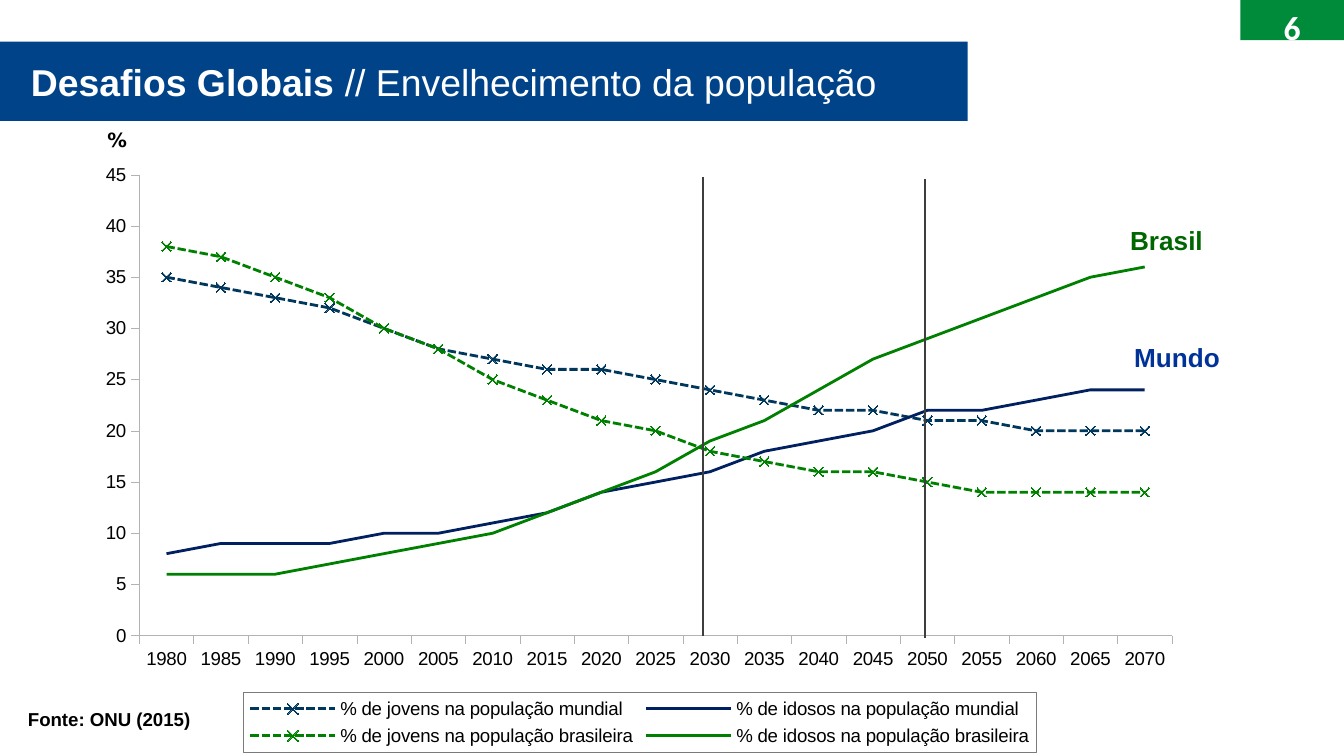
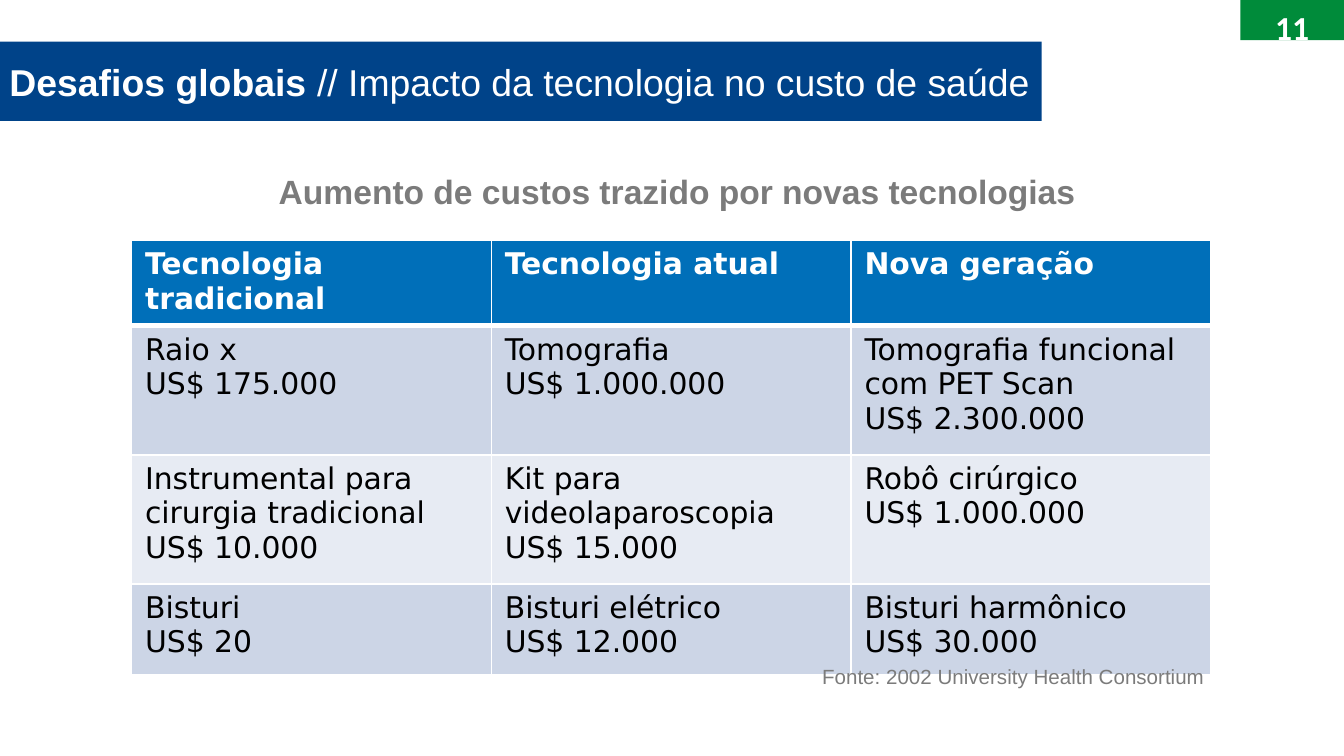
"""Build two slides on population ageing and the cost of health technology."""
from dataclasses import dataclass

from lxml import etree
from pptx import Presentation
from pptx.chart.data import CategoryChartData
from pptx.dml.color import RGBColor
from pptx.enum.chart import XL_CHART_TYPE, XL_LEGEND_POSITION, XL_MARKER_STYLE, XL_TICK_MARK
from pptx.enum.dml import MSO_LINE
from pptx.enum.shapes import MSO_CONNECTOR, MSO_SHAPE
from pptx.enum.text import MSO_ANCHOR, MSO_AUTO_SIZE, PP_ALIGN
from pptx.oxml.ns import qn
from pptx.util import Inches, Pt

LINE_CHART = XL_CHART_TYPE.LINE_MARKERS
LEGEND_BOTTOM = XL_LEGEND_POSITION.BOTTOM
MARKER_X, MARKER_NONE = XL_MARKER_STYLE.X, XL_MARKER_STYLE.NONE
TICK_OUT = XL_TICK_MARK.OUTSIDE
SHORT_DASH = MSO_LINE.SQUARE_DOT
STRAIGHT = MSO_CONNECTOR.STRAIGHT
RECTANGLE = MSO_SHAPE.RECTANGLE
TOP, MIDDLE = MSO_ANCHOR.TOP, MSO_ANCHOR.MIDDLE
FIT_SHAPE, FIT_NONE = MSO_AUTO_SIZE.SHAPE_TO_FIT_TEXT, MSO_AUTO_SIZE.NONE
LEFT, CENTER = PP_ALIGN.LEFT, PP_ALIGN.CENTER
TITLE_ONLY = 5


@dataclass(frozen=True)
class Theme:
    """Colours, fonts and type sizes of the presentation."""
    white: str = "FFFFFF"
    black: str = "000000"
    band: str = "004389"
    badge: str = "008B3A"
    gray: str = "7B7B7B"
    axis: str = "B3B3B3"
    guide: str = "3E3E3E"
    world_young: str = "00375C"
    world_old: str = "002060"
    brazil: str = "008000"
    brazil_label: str = "006600"
    world_label: str = "003399"
    header: str = "006FB9"
    rows: tuple = ("CCD5E6", "E7EBF3")
    font: str = "Arial"
    badge_font: str = "Calibri"
    table_font: str = "DejaVu Sans"
    title_size: float = 20
    heading_size: float = 18
    table_size: float = 16
    label_size: float = 14
    source_size: float = 11
    unit_size: float = 10.5
    chart_size: float = 10


YEARS = [str(year) for year in range(1980, 2071, 5)]
WORLD_YOUNG = (35, 34, 33, 32, 30, 28, 27, 26, 26, 25, 24, 23, 22, 22, 21, 21, 20, 20, 20)
WORLD_OLD = (8, 9, 9, 9, 10, 10, 11, 12, 14, 15, 16, 18, 19, 20, 22, 22, 23, 24, 24)
BRAZIL_YOUNG = (38, 37, 35, 33, 30, 28, 25, 23, 21, 20, 18, 17, 16, 16, 15, 14, 14, 14, 14)
BRAZIL_OLD = (6, 6, 6, 7, 8, 9, 10, 12, 14, 16, 19, 21, 24, 27, 29, 31, 33, 35, 36)

TECHNOLOGIES = (
    ("Tecnologia tradicional", "Tecnologia atual", "Nova geração"),
    ("Raio x\nUS$ 175.000", "Tomografia\nUS$ 1.000.000",
     "Tomografia funcional com PET Scan\nUS$ 2.300.000"),
    ("Instrumental para cirurgia tradicional\nUS$ 10.000",
     "Kit para videolaparoscopia\nUS$ 15.000", "Robô cirúrgico\nUS$ 1.000.000"),
    ("Bisturi\nUS$ 20", "Bisturi elétrico\nUS$ 12.000", "Bisturi harmônico\nUS$ 30.000"),
)


class Deck:
    """Hold the theme and the current slide, and draw each kind of element."""

    def __init__(self, theme):
        """Start a widescreen presentation with the given theme."""
        self.theme = theme
        self.show = Presentation()
        self.show.slide_width = Inches(10)
        self.show.slide_height = Inches(10) * 9 // 16
        self.slide = None

    def style(self, font, size, color, bold=False, name=None):
        """Format one font."""
        font.name = name or self.theme.font
        font.size = Pt(size)
        font.bold = bold
        font.color.rgb = RGBColor.from_string(color)

    def fill(self, target, color):
        """Give a shape or cell a solid fill."""
        target.fill.solid()
        target.fill.fore_color.rgb = RGBColor.from_string(color)

    def stroke(self, line, color, width):
        """Set the colour and width of a line."""
        line.color.rgb = RGBColor.from_string(color)
        line.width = Pt(width)

    def new_slide(self, number, topic, subject, band_width, indent):
        """Add a slide with its page badge and title band."""
        self.slide = self.show.slides.add_slide(self.show.slide_layouts[TITLE_ONLY])
        theme = self.theme
        badge = self.slide.shapes.add_shape(
            RECTANGLE, Inches(9.23), 0, Inches(0.77), Inches(0.3))
        badge.shadow.inherit = False
        self.fill(badge, theme.badge)
        badge.line.fill.background()
        badge.text_frame.text = number
        badge.text_frame.vertical_anchor = TOP
        page = badge.text_frame.paragraphs[0]
        page.alignment = CENTER
        self.style(page.runs[0].font, theme.heading_size, theme.white, True, theme.badge_font)

        band = self.slide.shapes.title
        band.left, band.top = 0, Inches(0.31)
        band.width, band.height = Inches(band_width), Inches(0.59)
        self.fill(band, theme.band)
        frame = band.text_frame
        frame.auto_size = FIT_NONE
        frame.word_wrap = True
        frame.vertical_anchor = MIDDLE
        frame.margin_left, frame.margin_right = Inches(indent), Inches(0.07)
        frame.margin_top = frame.margin_bottom = Inches(0.04)
        heading = frame.paragraphs[0]
        heading.alignment = LEFT
        for words, bold in ((topic + " ", True), ("// " + subject, False)):
            run = heading.add_run()
            run.text = words
            self.style(run.font, theme.title_size, theme.white, bold)

    def text(self, words, box, size, color, bold=True, name=None, centered=False):
        """Add a label, wrapped only when it is centred."""
        label = self.slide.shapes.add_textbox(*map(Inches, box))
        frame = label.text_frame
        frame.word_wrap = centered
        frame.auto_size = FIT_SHAPE
        frame.text = words
        paragraph = frame.paragraphs[0]
        paragraph.alignment = CENTER if centered else LEFT
        self.style(paragraph.runs[0].font, size, color, bold, name)

    def guide(self, x, top, bottom):
        """Draw a vertical line over the chart."""
        line = self.slide.shapes.add_connector(
            STRAIGHT, Inches(x), Inches(top), Inches(x), Inches(bottom))
        self.stroke(line.line, self.theme.guide, 1)
        etree.SubElement(line._element.spPr, qn("a:effectLst"))

    def place(self, parent, index, box, inner=False):
        """Fix the position of a chart part as fractions of the chart."""
        for old in parent.findall(qn("c:layout")):
            parent.remove(old)
        layout = etree.Element(qn("c:layout"))
        parent.insert(index, layout)
        manual = etree.SubElement(layout, qn("c:manualLayout"))
        settings = [("layoutTarget", "inner")] if inner else []
        settings += [("xMode", "edge"), ("yMode", "edge")]
        settings += zip("xywh", map(str, box))
        for tag, value in settings:
            etree.SubElement(manual, qn("c:" + tag)).set("val", value)

    def frame_legend(self, legend):
        """Outline the legend with a thin line."""
        outline = etree.Element(qn("c:spPr"))
        legend.find(qn("c:overlay")).addnext(outline)
        line = etree.SubElement(outline, qn("a:ln"), w=str(Pt(0.25)))
        solid = etree.SubElement(line, qn("a:solidFill"))
        etree.SubElement(solid, qn("a:srgbClr"), val=self.theme.gray)

    def line_chart(self, box, categories, series):
        """Add a line chart; dashed series carry x markers."""
        theme = self.theme
        data = CategoryChartData(number_format="0")
        data.categories = categories
        for name, values, _, _ in series:
            data.add_series(name, values)
        chart = self.slide.shapes.add_chart(LINE_CHART, *map(Inches, box), data).chart
        chart.has_title = False
        self.style(chart.font, theme.chart_size, theme.black)
        chart.plots[0].vary_by_categories = False
        for plotted, (_, _, color, dashed) in zip(chart.plots[0].series, series):
            plotted.smooth = False
            self.stroke(plotted.format.line, color, 1.5)
            plotted.marker.style = MARKER_X if dashed else MARKER_NONE
            if dashed:
                plotted.format.line.dash_style = SHORT_DASH
                plotted.marker.size = 5
                plotted.marker.format.fill.background()
                self.stroke(plotted.marker.format.line, color, 0.75)
        for axis in (chart.category_axis, chart.value_axis):
            axis.has_major_gridlines = False
            axis.major_tick_mark = TICK_OUT
            self.stroke(axis.format.line, theme.axis, 0.25)
        scale = chart.value_axis
        scale.minimum_scale, scale.maximum_scale, scale.major_unit = 0, 45, 5
        scale.tick_labels.number_format = "0"
        scale.tick_labels.number_format_is_linked = False
        chart.has_legend = True
        chart.legend.position = LEGEND_BOTTOM
        chart.legend.include_in_layout = False
        legend = chart.legend._element
        self.place(legend, 1, (0.14, 0.9, 0.72, 0.1))
        self.frame_legend(legend)
        plot_area = chart._chartSpace.chart.plotArea
        self.place(plot_area, 0, (0.046, 0.034, 0.937, 0.771), inner=True)

    def border(self, cell, widths):
        """Draw the white left, right, top and bottom borders of a cell."""
        properties = cell._tc.get_or_add_tcPr()
        for side, width in zip("LRTB", widths):
            line = etree.SubElement(properties, qn("a:ln" + side), w=str(Pt(width)))
            solid = etree.SubElement(line, qn("a:solidFill"))
            etree.SubElement(solid, qn("a:srgbClr"), val=self.theme.white)

    def table(self, box, heights, rows):
        """Add a table with a header row and alternating body rows."""
        theme = self.theme
        grid = self.slide.shapes.add_table(len(rows), len(rows[0]), *map(Inches, box)).table
        for index, (height, entries) in enumerate(zip(heights, rows)):
            grid.rows[index].height = Inches(height)
            is_header = index == 0
            for column, entry in enumerate(entries):
                cell = grid.cell(index, column)
                self.border(cell, (1, 1, 3 if index == 1 else 1, 3 if is_header else 1))
                self.fill(cell, theme.header if is_header else theme.rows[(index - 1) % 2])
                cell.text_frame.text = entry
                for paragraph in cell.text_frame.paragraphs:
                    self.style(paragraph.runs[0].font, theme.table_size,
                               theme.white if is_header else theme.black,
                               is_header, theme.table_font)


def ageing_slide(deck):
    """Show the shares of young and old people over time."""
    theme = deck.theme
    deck.new_slide("6", "Desafios Globais", "Envelhecimento da população", 7.2, 0.23)
    deck.line_chart((0.66, 1.15, 8.2, 4.45), YEARS, (
        ("% de jovens na população mundial", WORLD_YOUNG, theme.world_young, True),
        ("% de idosos na população mundial", WORLD_OLD, theme.world_old, False),
        ("% de jovens na população brasileira", BRAZIL_YOUNG, theme.brazil, True),
        ("% de idosos na população brasileira", BRAZIL_OLD, theme.brazil, False),
    ))
    deck.guide(5.23, 1.32, 4.73)
    deck.guide(6.88, 1.33, 4.75)
    deck.text("Fonte: ONU (2015)", (0.11, 5.22, 1.46, 0.27), theme.chart_size, theme.black)
    deck.text("%", (0.7, 0.9, 0.31, 0.29), theme.unit_size, theme.black, name=theme.table_font)
    deck.text("Brasil", (8.31, 1.62, 0.75, 0.34), theme.label_size, theme.brazil_label)
    deck.text("Mundo", (8.34, 2.49, 0.84, 0.34), theme.label_size, theme.world_label)


def technology_slide(deck):
    """Compare the prices of three generations of technology."""
    theme = deck.theme
    deck.new_slide("11", "Desafios globais", "Impacto da tecnologia no custo de saúde", 7.75, 0.07)
    deck.text("Aumento de custos trazido por novas tecnologias", (1.22, 1.22, 7.64, 0.4),
              theme.heading_size, theme.gray, centered=True)
    deck.table((0.98, 1.79, 8.03, 2.99), (0.4, 0.96, 0.96, 0.68), TECHNOLOGIES)
    deck.text("Fonte: 2002 University Health Consortium", (5.65, 4.89, 3.78, 0.29),
              theme.source_size, theme.gray, bold=False, centered=True)


def main():
    """Build and save the slides."""
    deck = Deck(Theme())
    ageing_slide(deck)
    technology_slide(deck)
    deck.show.save("out.pptx")


if __name__ == "__main__":
    main()
